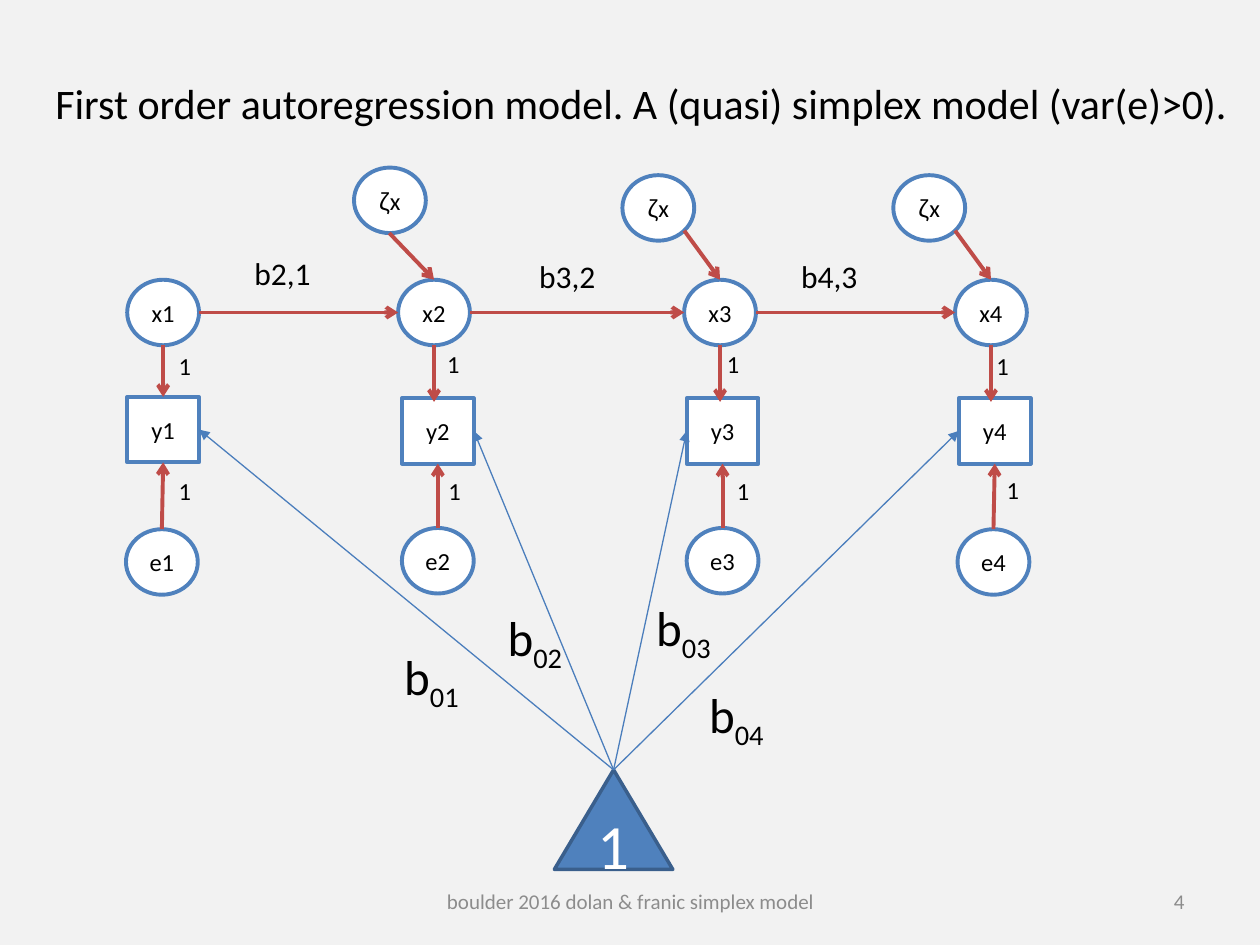
from lxml import etree
from pptx import Presentation
from pptx import util as u
from pptx.dml.color import RGBColor
from pptx.enum import shapes, text
from pptx.oxml.ns import qn

BLACK, WHITE, GREY = "000000", "FFFFFF", "8C8C8C"
BLUE, DARK_BLUE, MEAN_BLUE, RED = "4F81BD", "3A5F8C", "4B7EBC", "BF4C48"
NODE_W, NODE_H = 0.57, 0.52
TOP, LEFT, BOTTOM, RIGHT = range(4)
OVAL = shapes.MSO_SHAPE.OVAL
SQUARE = shapes.MSO_SHAPE.RECTANGLE


def colour(value):
    """Turn a hex string into a colour."""
    return RGBColor.from_string(value)


def add_span(para, words, size, ink, font="Calibri", baseline=None):
    """Add one run of text to a paragraph."""
    span = para.add_run()
    span.text = words
    span.font.size = u.Pt(size)
    span.font.name = font
    span.font.color.rgb = colour(ink)
    if baseline:
        span._r.get_or_add_rPr().set("baseline", str(baseline * 1000))


def add_node(page, kind, left, top, words, width=NODE_W, height=NODE_H,
             fill=WHITE, line=BLUE, weight=2.25, size=14, ink=BLACK):
    """Add a filled shape with centred text."""
    node = page.shapes.add_shape(kind, u.Inches(left), u.Inches(top),
                                 u.Inches(width), u.Inches(height))
    node.shadow.inherit = False
    node.fill.solid()
    node.fill.fore_color.rgb = colour(fill)
    node.line.color.rgb = colour(line)
    node.line.width = u.Pt(weight)
    frame = node.text_frame
    frame.word_wrap = False
    frame.vertical_anchor = text.MSO_ANCHOR.MIDDLE
    para = frame.paragraphs[0]
    para.alignment = text.PP_ALIGN.CENTER
    for letter in words:
        add_span(para, letter, size, ink, "Arial" if letter == "ζ" else "Calibri")
    return node


def add_label(page, left, top, width, height, words, size, subscript=""):
    """Add an unwrapped label, with an optional subscript."""
    box = page.shapes.add_textbox(u.Inches(left), u.Inches(top),
                                  u.Inches(width), u.Inches(height))
    box.text_frame.word_wrap = False
    box.text_frame.auto_size = text.MSO_AUTO_SIZE.SHAPE_TO_FIT_TEXT
    para = box.text_frame.paragraphs[0]
    add_span(para, words, size, BLACK)
    if subscript:
        add_span(para, subscript, size, BLACK, baseline=-25)


def add_footer(page, left, width, words, alignment):
    """Add a grey line of text at the foot of the page."""
    box = page.shapes.add_textbox(u.Inches(left), u.Inches(6.95),
                                  u.Inches(width), u.Inches(0.4))
    box.text_frame.word_wrap = True
    box.text_frame.vertical_anchor = text.MSO_ANCHOR.MIDDLE
    para = box.text_frame.paragraphs[0]
    para.alignment = alignment
    add_span(para, words, 12, GREY)


def add_arrow(page, start=(0, 0), end=(0, 0), begin_at=None, end_at=None,
              line=RED, weight=2.25, head="arrow"):
    """Add an arrow between points or joined (shape, side) pairs."""
    arrow = page.shapes.add_connector(
        shapes.MSO_CONNECTOR.STRAIGHT, *(u.Inches(v) for v in (*start, *end)))
    if begin_at:
        arrow.begin_connect(*begin_at)
    if end_at:
        arrow.end_connect(*end_at)
    arrow.line.color.rgb = colour(line)
    arrow.line.width = u.Pt(weight)
    etree.SubElement(arrow.line._get_or_add_ln(), qn("a:tailEnd"), type=head)
    etree.SubElement(arrow._element.spPr, qn("a:effectLst"))


def add_column(page, number, x_left, y_left, y_top, e_left, e_top, loading, residual):
    """Add the latent, observed and error nodes of one occasion."""
    observed = add_node(page, SQUARE, y_left, y_top, f"y{number}")
    add_node(page, OVAL, x_left, 2.22, f"x{number}")
    add_node(page, OVAL, e_left, e_top, f"e{number}")
    x_mid = x_left + NODE_W / 2
    if x_left == y_left:
        add_arrow(page, (x_mid, 2.74), end_at=(observed, TOP))
    else:
        add_arrow(page, (x_mid, 2.74), (x_mid, 3.19))
    add_arrow(page, (e_left + NODE_W / 2, e_top), end_at=(observed, BOTTOM))
    for left, top in (loading, residual):
        add_label(page, left, top, 0.32, 0.35, "1", 14)
    return observed


def add_regressions(page, x_lefts):
    """Add the paths between latent nodes and their innovations."""
    labels = [("b2,1", 1.92, 1.97), ("b3,2", 4.18, 1.99), ("b4,3", 6.26, 1.99)]
    innovations = [(2.81, 1.33, 3.09, 1.85), (4.94, 1.39, 5.43, 1.83),
                   (7.09, 1.39, 7.58, 1.83)]
    for before, after, label, innovation in zip(x_lefts, x_lefts[1:], labels, innovations):
        words, left, top = label
        node_left, node_top, start_x, start_y = innovation
        add_arrow(page, (before + NODE_W, 2.48), (after, 2.48))
        add_label(page, left, top, 0.68, 0.42, words, 18)
        add_node(page, OVAL, node_left, node_top, "ζx")
        add_arrow(page, (start_x, start_y), (after + NODE_W / 2, 2.22))


def add_means(page, observed):
    """Add the constant and its paths to the observed nodes."""
    constant = add_node(page, shapes.MSO_SHAPE.ISOSCELES_TRIANGLE, 4.4, 6.11, "1",
                        0.94, 0.79, BLUE, DARK_BLUE, 2, 36, WHITE)
    sides = [RIGHT, RIGHT, LEFT, LEFT]
    places = [(3.11, 5.08), (3.93, 4.77), (5.11, 4.69), (5.53, 5.38)]
    for number, (node, side, place) in enumerate(zip(observed, sides, places), 1):
        add_arrow(page, begin_at=(constant, TOP), end_at=(node, side),
                  line=MEAN_BLUE, weight=0.75, head="triangle")
        add_label(page, *place, 0.68, 0.57, "b", 28, f"0{number}")


def main():
    """Build the simplex model slide."""
    deck = Presentation()
    deck.slide_width, deck.slide_height = u.Inches(10), u.Inches(7.5)
    page = deck.slides.add_slide(deck.slide_layouts[6])
    page.background.fill.solid()
    page.background.fill.fore_color.rgb = colour("F2F2F2")
    columns = [
        (1.01, 1.01, 3.15, 1, 4.2, (1.32, 2.74), (1.32, 3.73)),
        (3.16, 3.19, 3.16, 3.19, 4.19, (3.45, 2.72), (3.46, 3.73)),
        (5.43, 5.45, 3.16, 5.45, 4.19, (5.67, 2.72), (5.75, 3.73)),
        (7.58, 7.61, 3.16, 7.6, 4.2, (7.81, 2.74), (7.89, 3.72)),
    ]
    observed = [add_column(page, number, *column)
                for number, column in enumerate(columns, 1)]
    add_regressions(page, [column[0] for column in columns])
    add_label(page, 0.34, 0.57, 9.58, 0.5,
              "First order autoregression model. A (quasi) simplex model (var(e)>0).", 24)
    add_means(page, observed)
    add_footer(page, 3.42, 3.17, "boulder 2016 dolan & franic simplex model",
               text.PP_ALIGN.CENTER)
    add_footer(page, 7.17, 2.33, "4", text.PP_ALIGN.RIGHT)
    deck.save("out.pptx")


if __name__ == "__main__":
    main()
